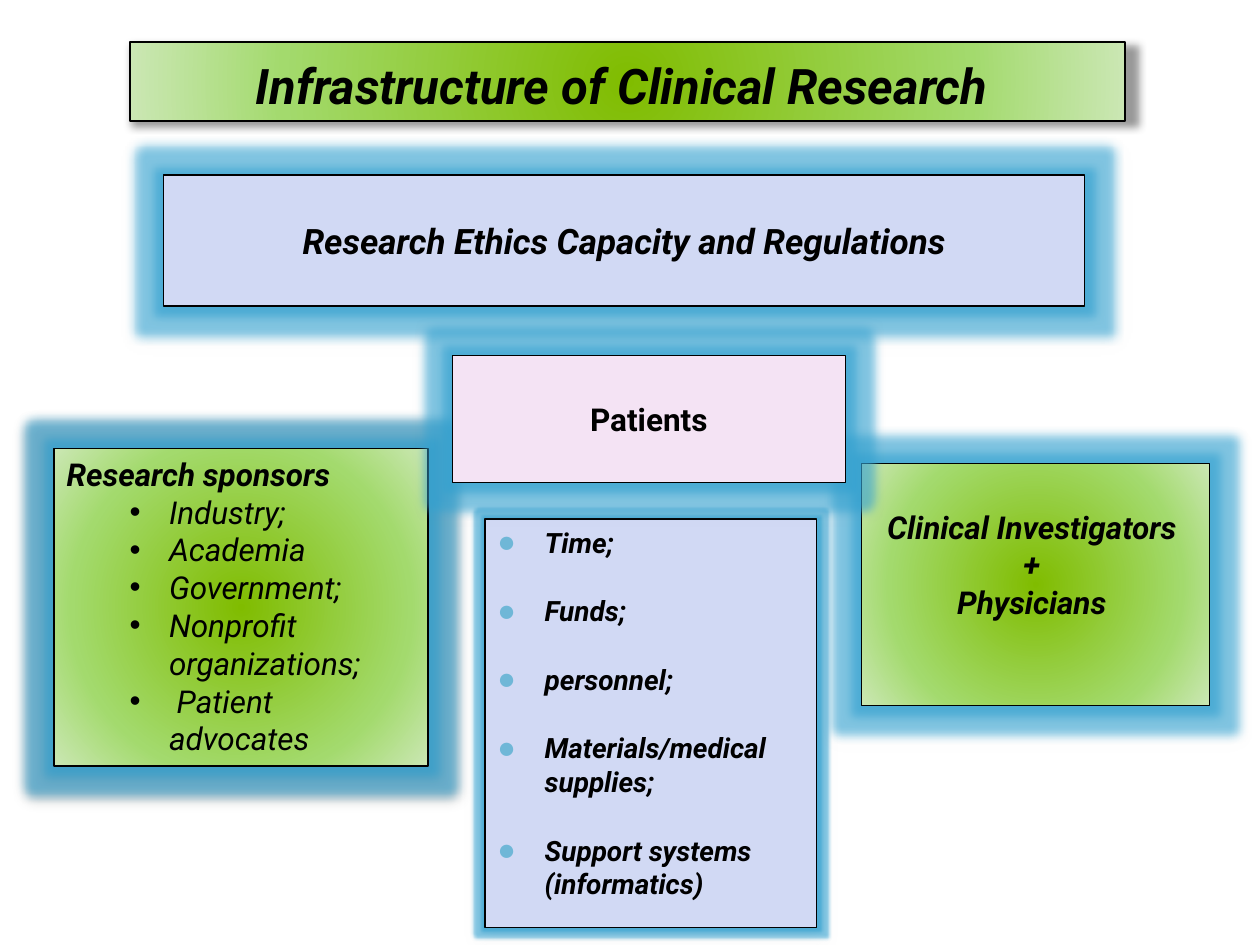
from lxml import etree
from pptx import Presentation
from pptx.dml.color import RGBColor
from pptx.enum import shapes, text
from pptx.oxml.ns import qn
from pptx.util import Pt

FONT = "Roboto"
BLACK = RGBColor(0x00, 0x00, 0x00)
SILVER = RGBColor(0xC0, 0xC0, 0xC0)
PERIWINKLE = RGBColor(0xD1, 0xD9, 0xF4)
PINK = RGBColor(0xF4, 0xE3, 0xF4)
SKY = RGBColor(0x6F, 0xB7, 0xD7)
GLOW = RGBColor(0x2F, 0xA0, 0xD0)
GREENS = [(0, RGBColor(0x80, 0xBC, 0x00)), (69, RGBColor(0xA3, 0xDA, 0x6D)),
          (100, RGBColor(0xCB, 0xE7, 0xB4))]

# Shadows: colour, blur, distance, horizontal scale in percent
DARK = (BLACK, 5, 2, 100)
WIDE = (BLACK, 5, 2, 101)
SOFT = (SILVER, 7, 2, 100)

TITLE = dict(lines=["Infrastructure of Clinical Research "], at=(74.2, 23.8, 568.8, 45.4),
             fill=GREENS, line=1, shadow=WIDE, size=28, anchor="BOTTOM")
RESOURCES = dict(
    lines=["Time;", "Funds;", "personnel;", "Materials/medical supplies;",
           "Support systems (informatics)"],
    at=(277.2, 296.6, 189.4, 233.3), fill=PERIWINKLE, glow=4, size=16,
    align="LEFT", anchor="TOP")
ETHICS = dict(lines=["Research Ethics Capacity and Regulations"],
              at=(93.6, 100.1, 526.3, 74.9), fill=PERIWINKLE, glow=11, size=20)
SPONSORS = dict(
    lines=["Research sponsors", "Industry;", "Academia", "Government;",
           "Nonprofit organizations;", " Patient advocates"],
    at=(31, 256.3, 213.8, 181.4), fill=GREENS, line=1, shadow=DARK, glow=11,
    align="LEFT", anchor="TOP")
INVESTIGATORS = dict(lines=["Clinical Investigators ", "+ ", "Physicians "],
                     at=(492.5, 265, 198.7, 138.2), fill=GREENS, glow=11,
                     anchor="TOP", top=25)
PATIENTS = dict(lines=["Patients"], at=(258.5, 203, 224.6, 72.7), fill=PINK, glow=11,
                italic=False)


def add(parent, tag, **attributes):
    values = {key: str(value) for key, value in attributes.items()}
    return etree.SubElement(parent, qn("a:" + tag), values)


def add_color(parent, color, alpha=None):
    node = add(parent, "srgbClr", val=color)
    if alpha:
        add(node, "alpha", val=alpha * 1000)


def paint(box, fill):
    """Fill with one colour, or with stops spreading from the centre."""
    box.fill.solid()
    if isinstance(fill, RGBColor):
        box.fill.fore_color.rgb = fill
        return
    properties = box._element.spPr
    solid = properties.find(qn("a:solidFill"))
    gradient = etree.Element(qn("a:gradFill"), rotWithShape="1")
    stops = add(gradient, "gsLst")
    for position, color in fill:
        add_color(add(stops, "gs", pos=position * 1000), color)
    add(add(gradient, "path", path="circle"), "fillToRect", l=50000, t=50000, r=50000, b=50000)
    properties.replace(solid, gradient)


def add_effects(box, shadow, glow):
    box.shadow.inherit = False
    effects = box._element.spPr.find(qn("a:effectLst"))
    if glow:
        add_color(add(effects, "glow", rad=Pt(glow)), GLOW, 60)
    color, blur, distance, scale = shadow
    node = add(effects, "outerShdw", blurRad=Pt(blur), dist=Pt(distance), dir=5400000,
               sx=scale * 1000, algn="tl", rotWithShape=0)
    add_color(node, color, 40)


def add_bullet(para, mark, margin, hanging, color=None, percent=100):
    properties = para._p.get_or_add_pPr()
    properties.set("marL", str(Pt(margin)))
    properties.set("indent", str(-Pt(hanging)))
    if color is not None:
        add_color(add(properties, "buClr"), color)
    add(properties, "buSzPct", val=percent * 1000)
    add(properties, "buFont", typeface="Arial")
    add(properties, "buChar", char=mark)


def format_box(box, lines, at, fill, line=0.75, shadow=SOFT, glow=0, size=18,
               align="CENTER", anchor="MIDDLE", italic=True, top=3.6):
    box.left, box.top, box.width, box.height = map(Pt, at)
    paint(box, fill)
    box.line.color.rgb = BLACK
    box.line.width = Pt(line)
    add_effects(box, shadow, glow)
    frame = box.text_frame
    frame.text = "\n".join(lines)
    frame.word_wrap = True
    frame.auto_size = text.MSO_AUTO_SIZE.NONE
    frame.vertical_anchor = text.MSO_ANCHOR[anchor]
    frame.margin_top = Pt(top)
    for para in frame.paragraphs:
        para.alignment = text.PP_ALIGN[align]
        for span in para.runs:
            font = span.font
            font.name, font.size = FONT, Pt(size)
            font.bold, font.italic = True, italic
            font.color.rgb = BLACK
    return frame.paragraphs


def add_box(page, content):
    box = page.shapes.add_shape(shapes.MSO_SHAPE.RECTANGLE, 0, 0, 0, 0)
    return format_box(box, **content)


def main():
    deck = Presentation()
    deck.slide_width, deck.slide_height = Pt(720), Pt(540)
    page = deck.slides.add_slide(deck.slide_layouts.get_by_name("Title Only"))
    format_box(page.shapes.title, **TITLE)

    for index, para in enumerate(add_box(page, RESOURCES)):
        para.space_before = Pt(20 if index else 0)
        add_bullet(para, "●", 27, 27, SKY, 110)

    add_box(page, ETHICS)

    for para in add_box(page, SPONSORS)[1:]:
        para.level = 1
        add_bullet(para, "•", 58.5, 22.5)
        para.runs[0].font.bold = False

    add_box(page, INVESTIGATORS)
    add_box(page, PATIENTS)
    deck.save("out.pptx")


if __name__ == "__main__":
    main()
